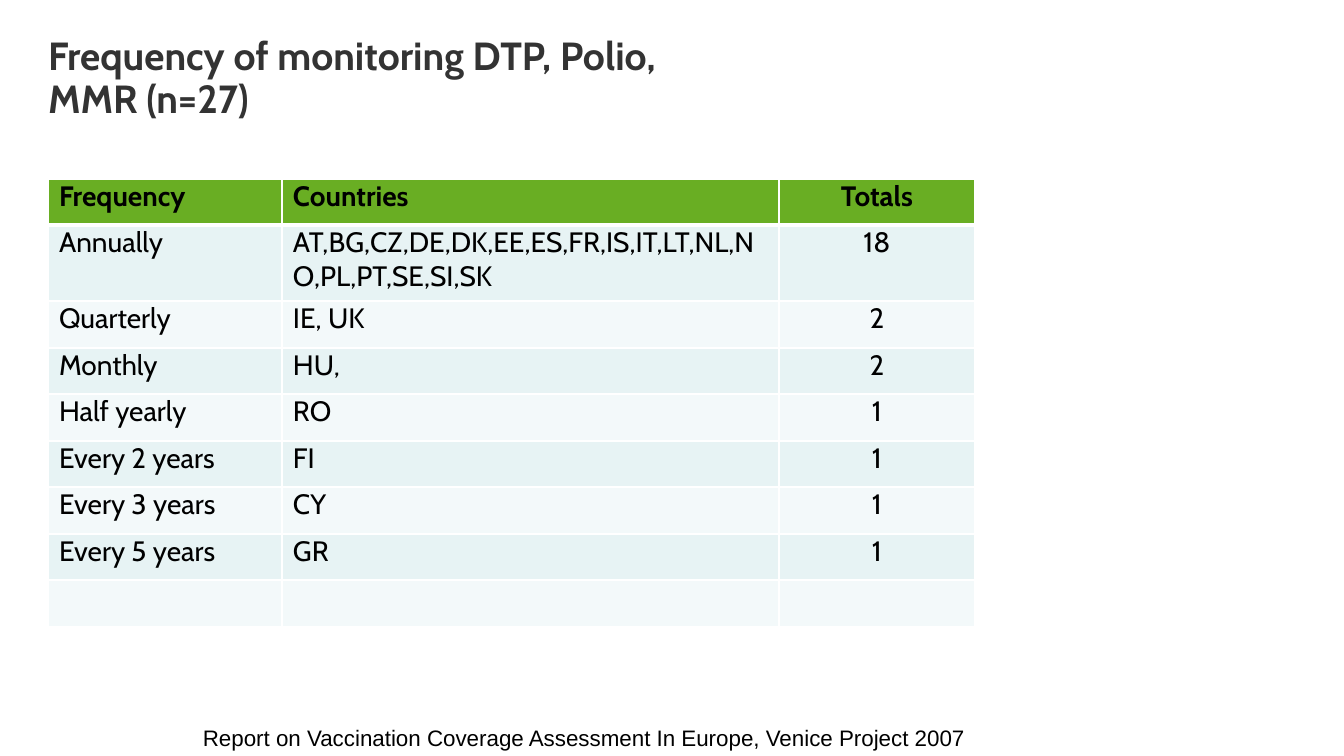
from dataclasses import dataclass
from lxml.etree import SubElement
from pptx import Presentation
from pptx.dml.color import RGBColor
from pptx.enum.text import MSO_ANCHOR, MSO_AUTO_SIZE, PP_ALIGN
from pptx.oxml.ns import qn
from pptx.util import Emu, Pt


@dataclass(frozen=True)
class Theme:
    heading: str = "333333"
    ink: str = "000000"
    header: str = "69AE23"
    bands: tuple = ("E7F3F4", "F3F9FA")
    rule: str = "FFFFFF"
    main_font: str = "Cabin"
    source_font: str = "Arial"
    heading_size: int = 28
    table_size: int = 20
    source_size: int = 16


theme = Theme()


def px(length):
    return Emu(round(length * 914400 / 100.8))


def add_run(paragraph, text, size, font, color, bold=False):
    run = paragraph.add_run()
    run.text = text
    run.font.size = Pt(size)
    run.font.name = font
    run.font.bold = bold
    run.font.color.rgb = RGBColor.from_string(color)


presentation = Presentation()
presentation.slide_width, presentation.slide_height = px(1344), px(756)
slide = presentation.slides.add_slide(presentation.slide_layouts[6])

title = slide.shapes.add_textbox(px(48), px(37), px(1137), px(88)).text_frame
title.word_wrap = True
title.margin_left = title.margin_top = title.margin_right = title.margin_bottom = 0
heading = title.paragraphs[0]
heading.line_spacing = 0.9
heading_style = (theme.heading_size, theme.main_font, theme.heading, True)
add_run(heading, "Frequency of monitoring DTP, Polio,", *heading_style)
heading.add_line_break()
add_run(heading, "MMR (n=27)", *heading_style)

monitoring = [
    ("Frequency", "Countries", "Totals"),
    ("Annually", "AT,BG,CZ,DE,DK,EE,ES,FR,IS,IT,LT,NL,NO,PL,PT,SE,SI,SK", "18"),
    ("Quarterly", "IE, UK", "2"),
    ("Monthly", "HU,", "2"),
    ("Half yearly", "RO", "1"),
    ("Every 2 years", "FI", "1"),
    ("Every 3 years", "CY", "1"),
    ("Every 5 years", "GR", "1"),
    ("", "", ""),
]
column_widths = [234, 497, 196]
row_heights = [46, 76] + [47, 46] * 3 + [47]
table = slide.shapes.add_table(
    len(monitoring), len(column_widths), px(48), px(179),
    px(sum(column_widths)), px(sum(row_heights)),
).table
for column, width in zip(table.columns, column_widths):
    column.width = px(width)
for row, height in zip(table.rows, row_heights):
    row.height = px(height)

for row_index, entries in enumerate(monitoring):
    is_header = row_index == 0
    fill = theme.header if is_header else theme.bands[(row_index - 1) % 2]
    edges = {"lnL": 1, "lnR": 1, "lnT": 3 if row_index == 1 else 1, "lnB": 3 if is_header else 1}
    for column_index, entry in enumerate(entries):
        cell = table.cell(row_index, column_index)
        cell.margin_left = cell.margin_right = px(11)
        cell.margin_top = cell.margin_bottom = 0
        cell.vertical_anchor = MSO_ANCHOR.TOP
        properties = cell._tc.get_or_add_tcPr()
        for edge, weight in edges.items():
            line = SubElement(properties, qn(f"a:{edge}"), w=str(Pt(weight)))
            SubElement(SubElement(line, qn("a:solidFill")), qn("a:srgbClr"), val=theme.rule)
        cell.fill.solid()
        cell.fill.fore_color.rgb = RGBColor.from_string(fill)
        paragraph = cell.text_frame.paragraphs[0]
        paragraph.alignment = PP_ALIGN.CENTER if column_index == 2 else PP_ALIGN.LEFT
        if entry:
            add_run(paragraph, entry, theme.table_size, theme.main_font, theme.ink, is_header)

source = slide.shapes.add_textbox(px(78), px(719), px(897), px(37)).text_frame
source.word_wrap = True
source.auto_size = MSO_AUTO_SIZE.SHAPE_TO_FIT_TEXT
citation = source.paragraphs[0]
citation.alignment = PP_ALIGN.RIGHT
add_run(
    citation, "Report on Vaccination Coverage Assessment In Europe, Venice Project 2007",
    theme.source_size, theme.source_font, theme.ink,
)

presentation.save("out.pptx")
